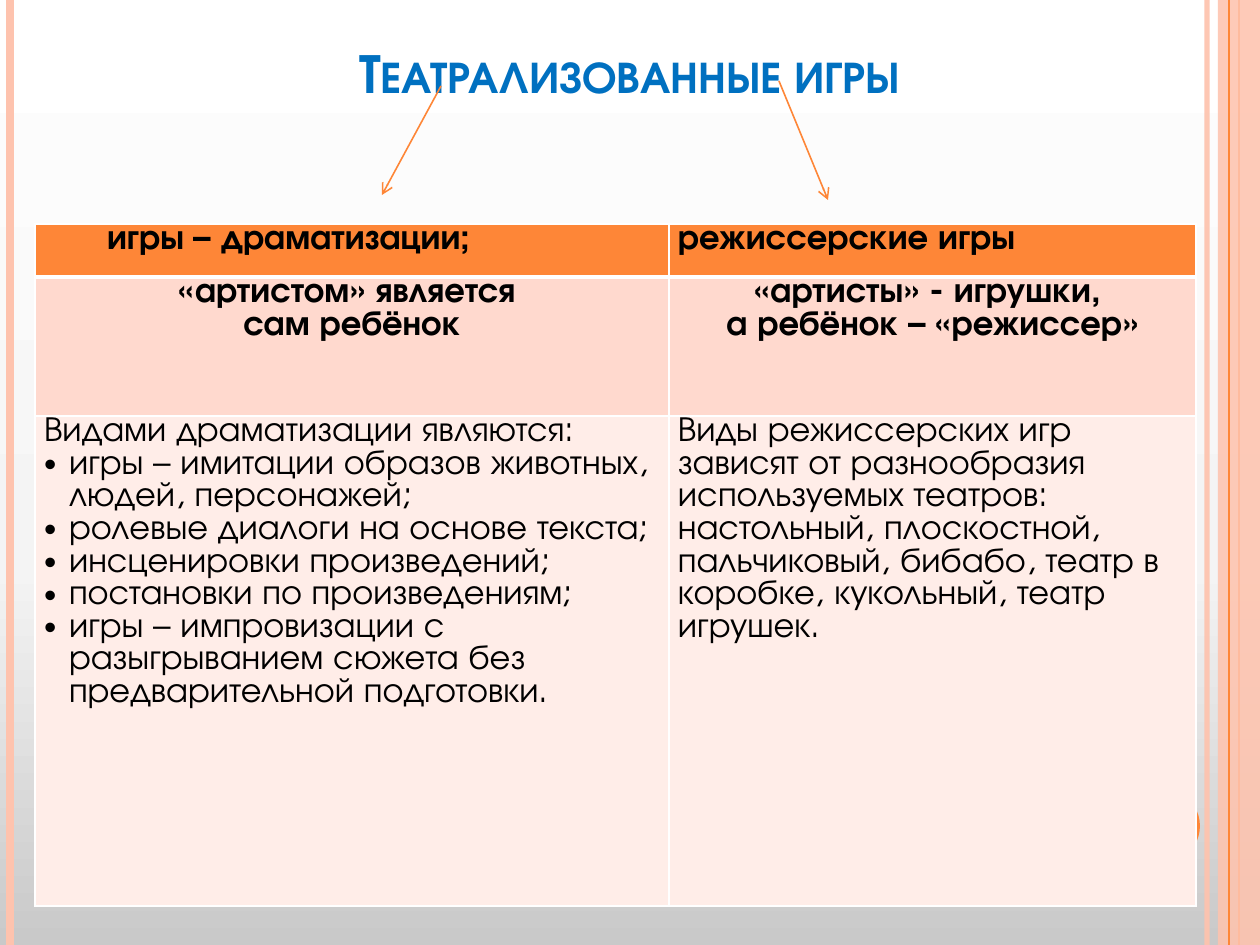
import copy
from dataclasses import dataclass, field

import pptx
import pptx.dml.color
import pptx.enum.shapes
import pptx.enum.text
import pptx.oxml
import pptx.oxml.ns
import pptx.util

EMU_PER_PX = 914400 / 126
SLIDE_WIDTH, SLIDE_HEIGHT = 1260, 945
CENTER = pptx.enum.text.PP_ALIGN.CENTER
LEFT = pptx.enum.text.PP_ALIGN.LEFT
MIDDLE = pptx.enum.text.MSO_ANCHOR.MIDDLE


@dataclass(frozen=True)
class Theme:
    font: str = "TeX Gyre Adventor"
    title_size: int = 32
    body_size: int = 20
    title: str = "0070C0"
    text: str = "000000"
    accent: str = "FE8637"
    pale: str = "FEC3AE"
    border: str = "FFFFFF"
    row_fills: tuple = ("FE8637", "FFD9CE", "FFEDE8")
    background: tuple = ((0, "C9C9C9"), (0.4, "F4F4F4"), (1, "FFFFFF"))


THEME = Theme()


@dataclass(frozen=True)
class Line:
    start: tuple[int, int]
    end: tuple[int, int]
    color: str
    width: float
    opacity: int = 100
    arrow: bool = False


@dataclass(frozen=True)
class TextLine:
    text: str
    align: object = LEFT
    bold: bool = False
    bullet: bool = False
    indent: int = 0


@dataclass(frozen=True)
class Grid:
    left: int
    top: int
    columns: tuple
    rows: tuple
    cells: list = field(default_factory=list)


def rail(x: int, color: str, width: float, opacity: int = 100) -> Line:
    """Describe a vertical line over the full slide height."""
    return Line((x, 0), (x, SLIDE_HEIGHT), color, width, opacity)


def heading(text: str, align: object = CENTER, indent: int = 0) -> TextLine:
    return TextLine(text, align, bold=True, indent=indent)


def bullet(text: str) -> TextLine:
    return TextLine(text, bullet=True, indent=25)


OUTER_RAILS = [rail(1207, THEME.pale, 3, 93), rail(10, THEME.pale, 4.5),
               rail(1239, THEME.accent, 1.5)]
INNER_RAIL = rail(1229, THEME.accent, 0.75)
ARROWS = [Line((441, 86), (382, 195), THEME.accent, 0.9, arrow=True),
          Line((779, 81), (828, 200), THEME.accent, 0.9, arrow=True)]

GAMES = Grid(35, 224, (634, 527), (53, 139, 490), [
    [[heading("игры – драматизации;", LEFT, 63)], [heading("режиссерские игры", LEFT)]],
    [[heading("«артистом» является "), heading("сам ребёнок")],
     [heading("«артисты» - игрушки, "), heading("а ребёнок – «режиссер»")]],
    [[TextLine("Видами драматизации являются:"),
      bullet("игры – имитации образов животных, людей, персонажей;"),
      bullet("ролевые диалоги на основе текста;"),
      bullet("инсценировки произведений;"),
      bullet("постановки по произведениям;"),
      bullet("игры – импровизации с разыгрыванием сюжета без предварительной подготовки.")],
     [TextLine("Виды режиссерских игр зависят от разнообразия"),
      TextLine("используемых театров: настольный, плоскостной, пальчиковый, бибабо, "
               "театр в коробке, кукольный, театр игрушек.")]],
])


def px(length: float) -> int:
    return round(length * EMU_PER_PX)


def rgb(color: str) -> pptx.dml.color.RGBColor:
    return pptx.dml.color.RGBColor.from_string(color)


def apply(target: object, values: dict) -> None:
    for name, value in values.items():
        setattr(target, name, value)


def add_xml(parent, tag: str, **attributes):
    element = pptx.oxml.parse_xml(f"<a:{tag} {pptx.oxml.ns.nsdecls('a')}/>")
    for name, value in attributes.items():
        element.set(name, str(value))
    parent.append(element)
    return element


def set_opacity(element, opacity: int) -> None:
    if opacity < 100:
        color = element.find(".//" + pptx.oxml.ns.qn("a:srgbClr"))
        add_xml(color, "alpha", val=opacity * 1000)


def paint_background(slide) -> None:
    fill = slide.background.fill
    fill.gradient()
    fill.gradient_angle = 90
    stop_list = slide.element.find(".//" + pptx.oxml.ns.qn("a:gsLst"))
    stop_list.insert(1, copy.deepcopy(stop_list[0]))
    for stop, (position, color) in zip(fill.gradient_stops, THEME.background):
        stop.color.rgb = rgb(color)
        stop.position = position


def add_line(slide, line: Line) -> None:
    points = [px(value) for value in (*line.start, *line.end)]
    connector = slide.shapes.add_connector(pptx.enum.shapes.MSO_CONNECTOR.STRAIGHT, *points)
    connector.line.color.rgb = rgb(line.color)
    connector.line.width = pptx.util.Pt(line.width)
    properties = connector.element.spPr
    set_opacity(properties, line.opacity)
    if line.arrow:
        add_xml(properties.find(pptx.oxml.ns.qn("a:ln")), "tailEnd", type="arrow")
    add_xml(properties, "effectLst")


def add_filled(slide, kind, box: tuple, color: str, opacity: int = 100) -> None:
    shape = slide.shapes.add_shape(kind, *map(px, box))
    shape.shadow.inherit = False
    shape.fill.solid()
    shape.fill.fore_color.rgb = rgb(color)
    set_opacity(shape.element.spPr, opacity)
    shape.line.fill.background()


def add_run(paragraph, text: str, color: str, size: int, bold: bool):
    run = paragraph.add_run()
    run.text = text
    apply(run.font, {"name": THEME.font, "size": pptx.util.Pt(size), "bold": bold})
    run.font.color.rgb = rgb(color)
    return run


def add_title(slide, text: str) -> None:
    frame = slide.shapes.add_textbox(*map(px, (312, 26, 635, 91))).text_frame
    apply(frame, {"word_wrap": True, "vertical_anchor": MIDDLE})
    paragraph = frame.paragraphs[0]
    paragraph.alignment = CENTER
    run = add_run(paragraph, text, THEME.title, THEME.title_size, True)
    run.font._element.set("cap", "small")


def write_lines(frame, lines: list[TextLine]) -> None:
    for index, line in enumerate(lines):
        paragraph = frame.add_paragraph() if index else frame.paragraphs[0]
        paragraph.alignment = line.align
        properties = paragraph._p.get_or_add_pPr()
        properties.set("marL", str(px(line.indent)))
        properties.set("indent", str(-px(line.indent) if line.bullet else 0))
        if line.bullet:
            add_xml(properties, "buFont", typeface="Arial")
            add_xml(properties, "buChar", char="•")
        add_run(paragraph, line.text, THEME.text, THEME.body_size, line.bold)


def add_borders(cell, widths: dict) -> None:
    properties = cell._tc.get_or_add_tcPr()
    for side, width in widths.items():
        border = add_xml(properties, f"ln{side}", w=pptx.util.Pt(width))
        add_xml(add_xml(border, "solidFill"), "srgbClr", val=THEME.border)


def add_grid(slide, grid: Grid) -> None:
    box = (grid.left, grid.top, sum(grid.columns), sum(grid.rows))
    table = slide.shapes.add_table(len(grid.rows), len(grid.columns), *map(px, box)).table
    for column, width in zip(table.columns, grid.columns):
        column.width = px(width)
    for row_index, (row, height) in enumerate(zip(table.rows, grid.rows)):
        row.height = px(height)
        widths = {"L": 1, "R": 1, "T": 3 if row_index == 1 else 1,
                  "B": 3 if row_index == 0 else 1}
        for cell, lines in zip(row.cells, grid.cells[row_index]):
            apply(cell, {"margin_left": px(9), "margin_right": px(9),
                         "margin_top": 0, "margin_bottom": 0})
            add_borders(cell, widths)
            cell.fill.solid()
            cell.fill.fore_color.rgb = rgb(THEME.row_fills[row_index])
            write_lines(cell.text_frame, lines)


def main() -> None:
    presentation = pptx.Presentation()
    apply(presentation, {"slide_width": px(SLIDE_WIDTH), "slide_height": px(SLIDE_HEIGHT)})
    slide = presentation.slides.add_slide(presentation.slide_layouts[6])
    shapes = pptx.enum.shapes.MSO_SHAPE
    paint_background(slide)
    for line in OUTER_RAILS:
        add_line(slide, line)
    add_filled(slide, shapes.RECTANGLE, (1218, 0, 42, SLIDE_HEIGHT), THEME.pale, 87)
    add_line(slide, INNER_RAIL)
    add_filled(slide, shapes.OVAL, (1124, 788, 76, 76), THEME.accent)
    add_title(slide, "Театрализованные игры")
    add_grid(slide, GAMES)
    for arrow in ARROWS:
        add_line(slide, arrow)
    presentation.save("out.pptx")


if __name__ == "__main__":
    main()
